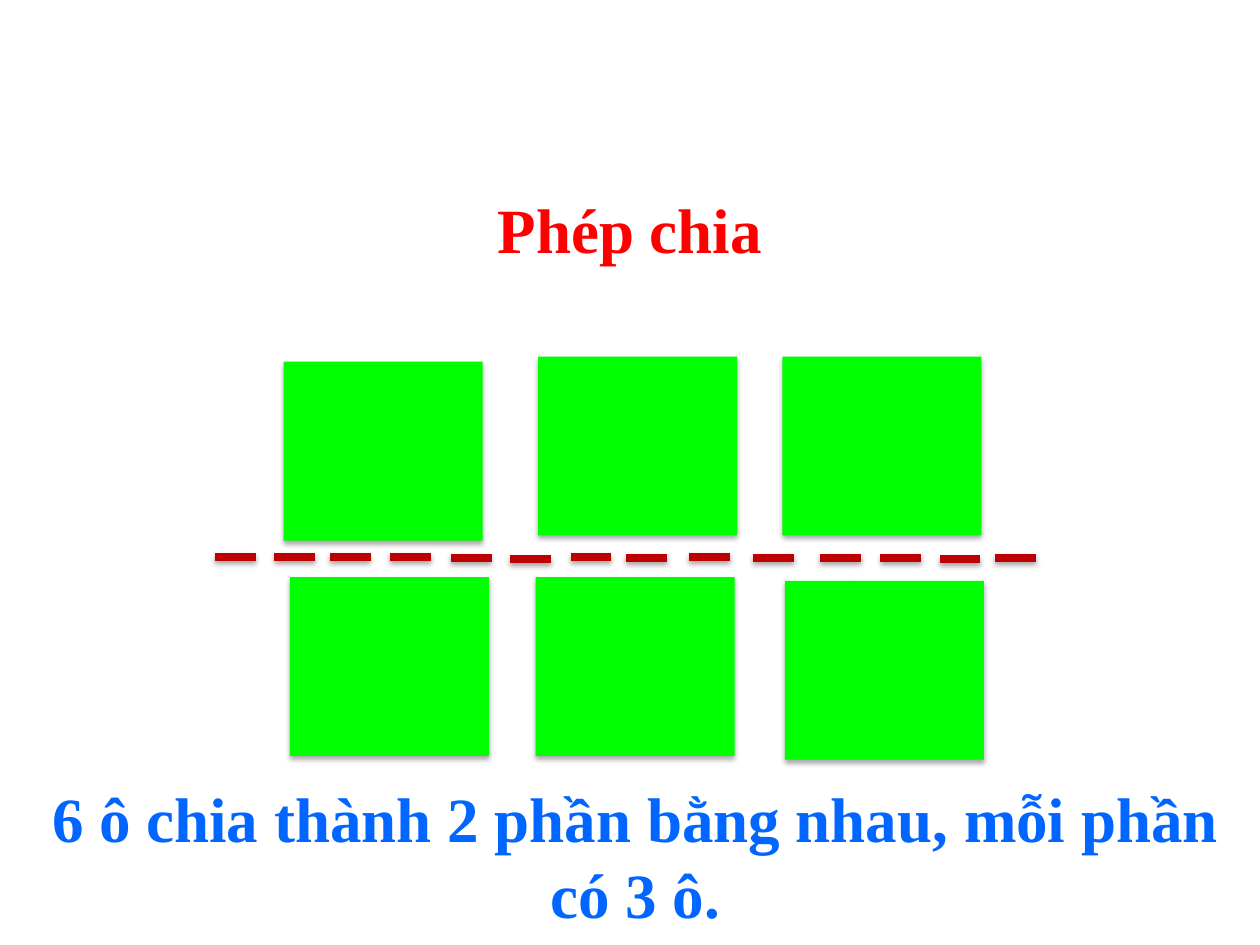
import pptx
import pptx.util
import pptx.oxml
import pptx.oxml.ns
import pptx.dml.color
import pptx.enum.shapes
import pptx.enum.text

Inches, Pt = pptx.util.Inches, pptx.util.Pt
MSO_SHAPE = pptx.enum.shapes.MSO_SHAPE

TITLE = "Phép chia"
SUMMARY = "6 ô chia thành 2 phần bằng nhau, mỗi phần có 3 ô."

# Hand-placed left and top of each piece
SQUARES = [(2.25, 2.87), (4.27, 2.83), (6.21, 2.83),
           (2.3, 4.58), (4.25, 4.58), (6.23, 4.61)]
DASHES = [(1.65, 4.29), (2.12, 4.29), (2.56, 4.29), (3.04, 4.29),
          (3.52, 4.3), (3.99, 4.31), (4.47, 4.29), (4.91, 4.3),
          (5.41, 4.29), (5.92, 4.3), (6.45, 4.3), (6.93, 4.3),
          (7.4, 4.31), (7.84, 4.3)]
SQUARE_SIZE = (1.58, 1.42)
DASH_SIZE = (0.44, 0.26)

THEME = {
    "font": "Times New Roman", "size": 36,
    "title": "FF0000", "summary": "0066FF",
    "square": "00FF00", "dash": "C00000",
    "shadow": "000000", "shadow_alpha": 35, "blur": 3.1, "distance": 1.8,
}


def rgb(name):
    return pptx.dml.color.RGBColor.from_string(THEME[name])


def add_shadow(sp):
    """Give the shape a soft shadow straight below it."""
    sp.shadow.inherit = False
    effects = sp._element.spPr.find(pptx.oxml.ns.qn("a:effectLst"))
    effects.append(pptx.oxml.parse_xml(
        f'<a:outerShdw {pptx.oxml.ns.nsdecls("a")} blurRad="{Pt(THEME["blur"])}" '
        f'dist="{Pt(THEME["distance"])}" dir="5400000" rotWithShape="0">'
        f'<a:srgbClr val="{THEME["shadow"]}">'
        f'<a:alpha val="{THEME["shadow_alpha"] * 1000}"/></a:srgbClr></a:outerShdw>'))


def add_pieces(s, kind, places, size, color):
    for place in places:
        sp = s.shapes.add_shape(kind, *map(Inches, place + size))
        sp.fill.solid()
        sp.fill.fore_color.rgb = rgb(color)
        sp.line.fill.background()
        add_shadow(sp)


def add_text(s, text, box, *, color, size=THEME["size"], bold=True):
    tf = s.shapes.add_textbox(*map(Inches, box)).text_frame
    tf.word_wrap = True
    tf.auto_size = pptx.enum.text.MSO_AUTO_SIZE.SHAPE_TO_FIT_TEXT
    p = tf.paragraphs[0]
    p.alignment = pptx.enum.text.PP_ALIGN.CENTER
    r = p.add_run()
    r.text = text
    r.font.name = THEME["font"]
    r.font.size = Pt(size)
    r.font.bold = bold
    r.font.color.rgb = rgb(color)


def main():
    prs = pptx.Presentation()
    prs.slide_width, prs.slide_height = Inches(10), Inches(7.5)
    s = prs.slides.add_slide(prs.slide_layouts[6])
    add_pieces(s, MSO_SHAPE.RECTANGLE, SQUARES, SQUARE_SIZE, "square")
    add_pieces(s, MSO_SHAPE.MATH_MINUS, DASHES, DASH_SIZE, "dash")
    add_text(s, SUMMARY, (0.08, 6.14, 9.92, 1.31), color="summary")
    add_text(s, TITLE, (0, 1.46, 10, 0.71), color="title")
    prs.save("out.pptx")


if __name__ == "__main__":
    main()
